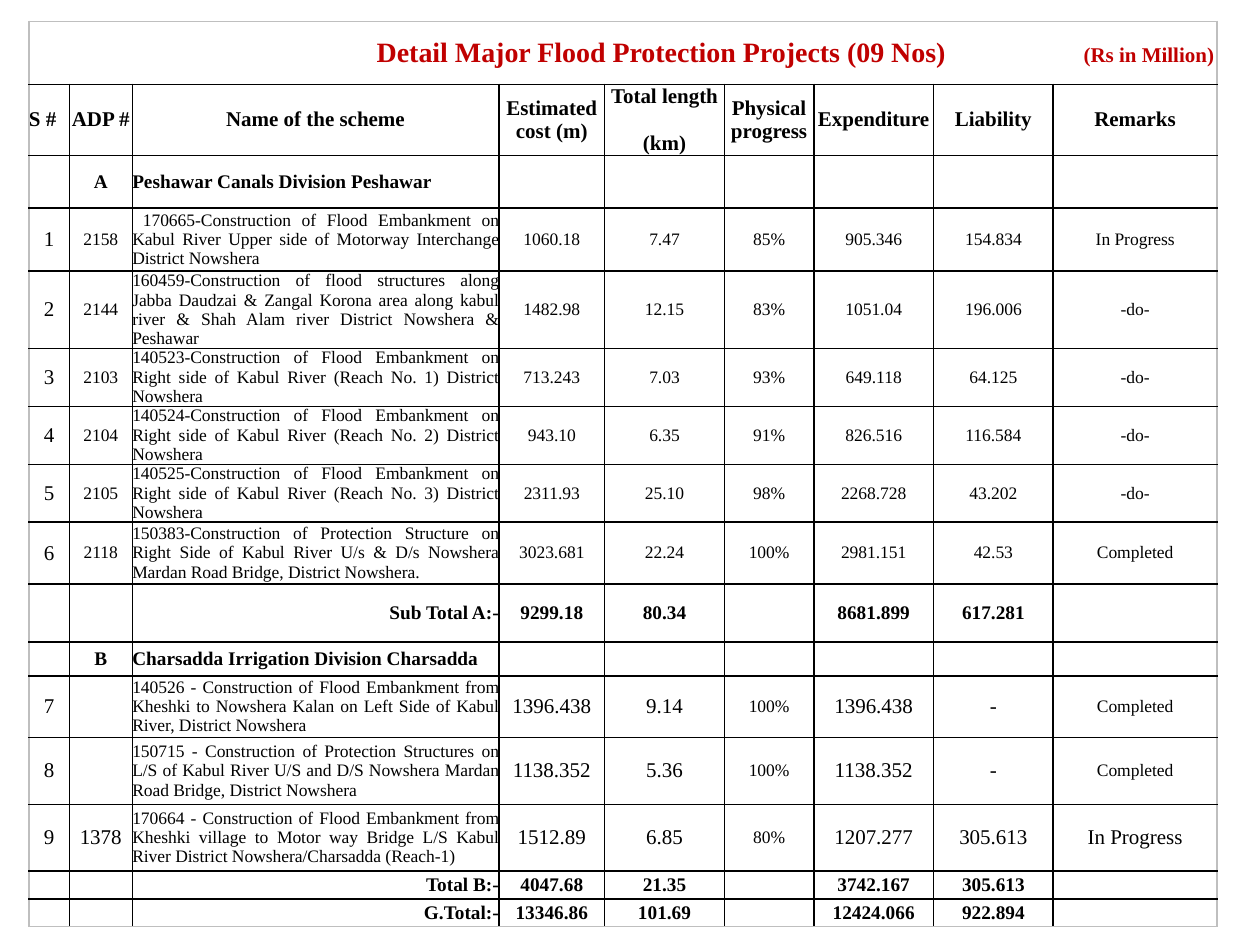
from pptx import Presentation
from pptx.dml.color import RGBColor
from pptx.enum.text import MSO_ANCHOR, PP_ALIGN
from pptx.oxml.ns import qn
from pptx.util import Inches, Pt
from lxml import etree

LEFT, CENTER, RIGHT, JUSTIFY = PP_ALIGN.LEFT, PP_ALIGN.CENTER, PP_ALIGN.RIGHT, PP_ALIGN.JUSTIFY
MIDDLE = MSO_ANCHOR.MIDDLE
RED = RGBColor(0xC0, 0x00, 0x00)
BLACK = RGBColor(0x00, 0x00, 0x00)
GREY = RGBColor(0xBF, 0xBF, 0xBF)
FONT = "Times New Roman"

COLUMN_WIDTHS = [0.32, 0.5, 2.91, 0.84, 0.95, 0.71, 0.95, 0.95, 1.3]
ROW_HEIGHTS = [0.5, 0.4, 0.42, 0.5, 0.6, 0.46, 0.42, 0.39,
               0.49, 0.46, 0.27, 0.49, 0.53, 0.53, 0.22, 0.22]
SERIAL, ADP, NAME, COST, LENGTH, PROGRESS, SPENT, LIABILITY, REMARKS = range(9)

HEADINGS = ["S #", "ADP #", "Name of the scheme", "Estimated cost (m)", "Total length\n(km)",
            "Physical progress", "Expenditure", "Liability", "Remarks"]
DIVISION_A = ["", "A", "Peshawar Canals Division Peshawar"]
SCHEMES_A = [
    ["1", "2158", " 170665-Construction of Flood Embankment on Kabul River Upper side of Motorway "
     "Interchange District Nowshera",
     "1060.18", "7.47", "85%", "905.346", "154.834", "In Progress"],
    ["2", "2144", "160459-Construction of flood structures along Jabba Daudzai & Zangal Korona area "
     "along kabul river & Shah Alam river District Nowshera & Peshawar",
     "1482.98", "12.15", "83%", "1051.04", "196.006", "-do-"],
    ["3", "2103", "140523-Construction of Flood Embankment on Right side of Kabul River "
     "(Reach No. 1) District Nowshera",
     "713.243", "7.03", "93%", "649.118", "64.125", "-do-"],
    ["4", "2104", "140524-Construction of Flood Embankment on Right side of Kabul River "
     "(Reach No. 2) District Nowshera",
     "943.10", "6.35", "91%", "826.516", "116.584", "-do-"],
    ["5", "2105", "140525-Construction of Flood Embankment on Right side of Kabul River "
     "(Reach No. 3) District Nowshera",
     "2311.93", "25.10", "98%", "2268.728", "43.202", "-do-"],
    ["6", "2118", "150383-Construction of Protection Structure on Right Side of Kabul River "
     "U/s & D/s Nowshera Mardan Road Bridge, District Nowshera.",
     "3023.681", "22.24", "100%", "2981.151", "42.53", "Completed"],
]
SUBTOTAL_A = ["", "", "Sub Total A:-", "9299.18", "80.34", "", "8681.899", "617.281"]
DIVISION_B = ["", "B", "Charsadda Irrigation Division Charsadda"]
SCHEMES_B = [
    ["7", "", "140526 - Construction of Flood Embankment from Kheshki to Nowshera Kalan on "
     "Left Side of Kabul River, District Nowshera",
     "1396.438", "9.14", "100%", "1396.438", "-", "Completed"],
    ["8", "", "150715 - Construction of Protection Structures on L/S of Kabul River U/S and D/S "
     "Nowshera Mardan Road Bridge, District Nowshera",
     "1138.352", "5.36", "100%", "1138.352", "-", "Completed"],
    ["9", "1378", "170664 - Construction of Flood Embankment from Kheshki village to Motor way "
     "Bridge L/S Kabul River District Nowshera/Charsadda (Reach-1)",
     "1512.89", "6.85", "80%", "1207.277", "305.613", "In Progress"],
]
TOTALS_B = [
    ["", "", "Total B:-", "4047.68", "21.35", "", "3742.167", "305.613"],
    ["", "", "G.Total:-", "13346.86", "101.69", "", "12424.066", "922.894"],
]

CELL_FORMAT = {"margin_left": 0, "margin_right": 0, "margin_top": 0, "margin_bottom": 0,
               "vertical_anchor": MIDDLE}


def apply_format(target, values):
    for name, value in values.items():
        setattr(target, name, value)


def style_font(font, size, bold, color=BLACK):
    apply_format(font, {"name": FONT, "size": Pt(size), "bold": bold})
    font.color.rgb = color


def set_borders(cell, colors):
    """Draw 1 pt borders; colors maps the sides L, R, T and B, in that order."""
    properties = cell._tc.get_or_add_tcPr()
    for position, (side, color) in enumerate(colors.items()):
        line = etree.Element(qn(f"a:ln{side}"), w=str(Pt(1)))
        fill = etree.SubElement(line, qn("a:solidFill"))
        etree.SubElement(fill, qn("a:srgbClr"), val=str(color))
        properties.insert(position, line)


def write_cell(cell, text, size, bold, align):
    lines = text.split("\n")
    cell.text = text
    for number, paragraph in enumerate(cell.text_frame.paragraphs):
        paragraph.alignment = align
        if number:
            paragraph.space_before = Pt(size * 1.15)
        for run in paragraph.runs:
            style_font(run.font, size, bold)
    if not lines[0]:
        # An empty cell keeps a small line so that its row stays low
        etree.SubElement(paragraph._p, qn("a:endParaRPr"), sz=str(size * 100))


def write_row(table, row, texts, sizes, bold, name_align):
    padded = texts + [""] * (len(COLUMN_WIDTHS) - len(texts))
    for column, text in enumerate(padded):
        align = name_align if column == NAME else CENTER
        size = sizes[column] if text else 10
        write_cell(table.cell(row, column), text, size, bold, align)


def scheme_sizes(texts):
    """Serials are large; from scheme 7 on most figures are large as well."""
    large = {SERIAL}
    if int(texts[SERIAL]) >= 7:
        large |= {ADP, COST, LENGTH, SPENT, LIABILITY}
        if texts[REMARKS] == "In Progress":
            large.add(REMARKS)
    return [12 if column in large else 10 for column in range(len(COLUMN_WIDTHS))]


def write_title(table):
    title_cell = table.cell(0, 0)
    title_cell.merge(table.cell(0, len(COLUMN_WIDTHS) - 1))
    paragraph = title_cell.text_frame.paragraphs[0]
    paragraph.alignment = LEFT
    tabs = etree.SubElement(paragraph._p.get_or_add_pPr(), qn("a:tabLst"))
    for stop in (2.76, 8.37):
        etree.SubElement(tabs, qn("a:tab"), pos=str(Inches(stop)), algn="l")
    for text, size in (("\tDetail Major Flood Protection Projects (09 Nos)", 16),
                       ("\t(Rs in Million)", 12)):
        run = paragraph.add_run()
        run.text = text
        style_font(run.font, size, True, RED)


def add_project_table(slide):
    rows, columns = len(ROW_HEIGHTS), len(COLUMN_WIDTHS)
    table = slide.shapes.add_table(rows, columns, Inches(0.23), Inches(0.17),
                                   Inches(sum(COLUMN_WIDTHS)), Inches(sum(ROW_HEIGHTS))).table
    apply_format(table, {"first_row": False, "horz_banding": False})
    for column, width in zip(table.columns, COLUMN_WIDTHS):
        column.width = Inches(width)
    for row, height in zip(table.rows, ROW_HEIGHTS):
        row.height = Inches(height)

    # Black grid inside a grey outer frame
    for row in range(rows):
        for column in range(columns):
            cell = table.cell(row, column)
            apply_format(cell, CELL_FORMAT)
            cell.fill.background()
            set_borders(cell, {"L": GREY if column == 0 else BLACK,
                               "R": GREY if column == columns - 1 or row == 0 else BLACK,
                               "T": GREY if row == 0 else BLACK,
                               "B": GREY if row == rows - 1 else BLACK})
    return table


def main():
    presentation = Presentation()
    presentation.slide_width, presentation.slide_height = Inches(10), Inches(7.5)
    slide = presentation.slides.add_slide(presentation.slide_layouts[6])
    table = add_project_table(slide)

    # Title and column headings
    write_title(table)
    write_row(table, 1, HEADINGS, [12] * len(HEADINGS), True, CENTER)
    table.cell(1, SERIAL).text_frame.paragraphs[0].alignment = LEFT

    # Divisions, their schemes and totals
    body = [("division", DIVISION_A)]
    body += [("scheme", scheme) for scheme in SCHEMES_A]
    body += [("total", SUBTOTAL_A), ("division", DIVISION_B)]
    body += [("scheme", scheme) for scheme in SCHEMES_B]
    body += [("total", total) for total in TOTALS_B]
    for row, (kind, texts) in enumerate(body, start=2):
        is_scheme = kind == "scheme"
        sizes = scheme_sizes(texts) if is_scheme else [11] * len(COLUMN_WIDTHS)
        write_row(table, row, texts, sizes, not is_scheme, RIGHT if kind == "total" else JUSTIFY)

    presentation.save("out.pptx")


if __name__ == "__main__":
    main()
